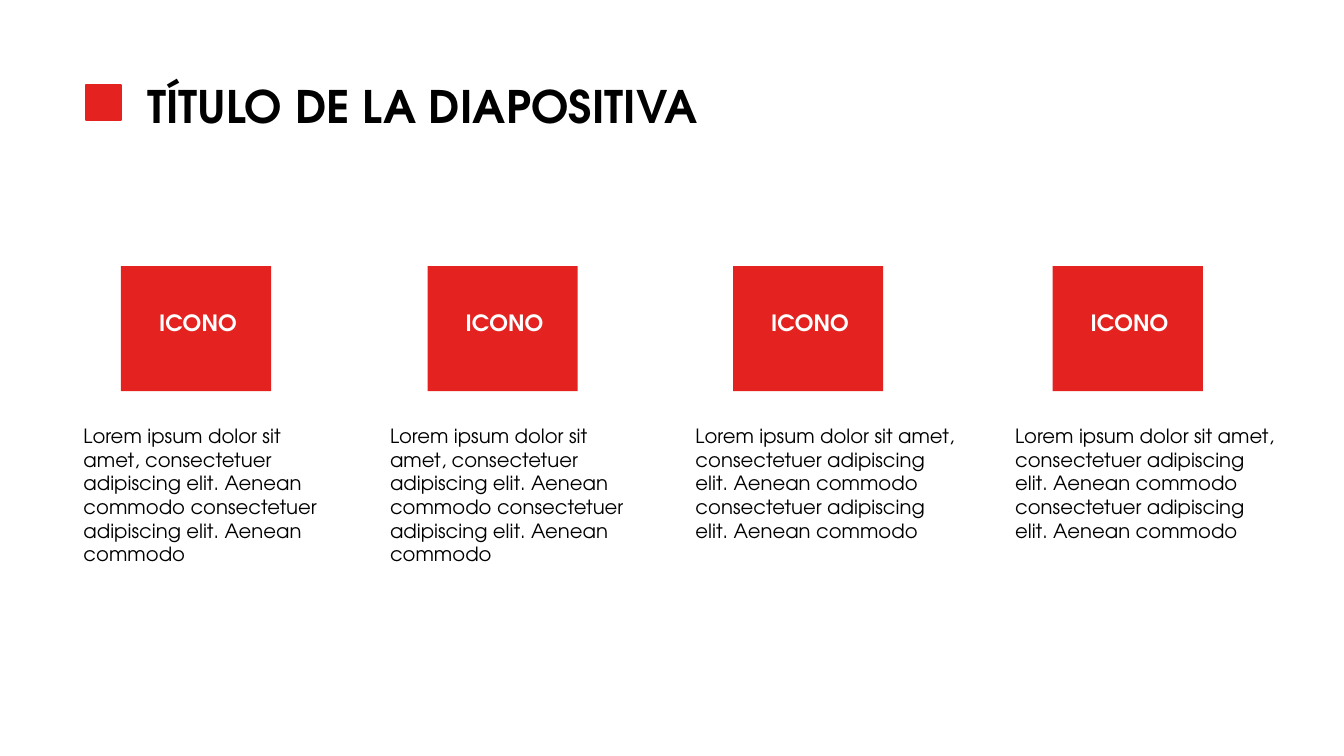
"""Build a title slide with four icon columns and their captions."""
from pptx import Presentation
from pptx.dml.color import RGBColor
from pptx.enum import shapes, text
from pptx.util import Inches, Pt

RED = RGBColor(0xE4, 0x22, 0x1F)
BLACK = RGBColor(0, 0, 0)
WHITE = RGBColor(255, 255, 255)
FONT = "TeX Gyre Adventor"
CAPTION = ("Lorem ipsum dolor sit amet, consectetuer adipiscing elit. Aenean commodo "
           "consectetuer adipiscing elit. Aenean commodo")
COLUMNS = [(0.73, 2.73), (3.77, 2.73), (6.8, 2.83), (9.97, 2.83)]


def write(box, words, size, color, bold=False):
    frame = box.text_frame
    frame.word_wrap = True
    frame.auto_size = text.MSO_AUTO_SIZE.SHAPE_TO_FIT_TEXT
    frame.vertical_anchor = text.MSO_ANCHOR.TOP
    para = frame.paragraphs[0]
    para.alignment = text.PP_ALIGN.LEFT
    span = para.add_run()
    span.text = words
    span.font.name = FONT
    span.font.size = Pt(size)
    span.font.bold = bold
    span.font.color.rgb = color


def add_red_block(left, top, width, height):
    block = page.shapes.add_shape(shapes.MSO_SHAPE.RECTANGLE, Inches(left), Inches(top),
                                  Inches(width), Inches(height))
    block.shadow.inherit = False
    block.fill.solid()
    block.fill.fore_color.rgb = RED
    block.line.fill.background()
    return block


deck = Presentation()
deck.slide_width, deck.slide_height = Inches(13.33), Inches(7.5)
page = deck.slides.add_slide(deck.slide_layouts[5])

title = page.shapes.title
title.left, title.top = Inches(1.36), Inches(0.73)
title.width, title.height = Inches(9.04), Inches(0.64)
write(title, "TÍTULO DE LA DIAPOSITIVA", 32, BLACK, bold=True)

marker = add_red_block(0.85, 0.84, 0.35, 0.35)
marker.line.color.rgb = RED
marker.line.width = Pt(1.5)

for left, width in COLUMNS:
    caption = page.shapes.add_textbox(Inches(left), Inches(4.16), Inches(width), Inches(1.28))
    write(caption, CAPTION, 14, BLACK)
    add_red_block(left + 0.47, 2.64, 1.49, 1.24)
    label = page.shapes.add_textbox(Inches(left + 0.75), Inches(3.02), Inches(1.03), Inches(0.37))
    write(label, "ICONO", 16, WHITE, bold=True)

deck.save("out.pptx")
